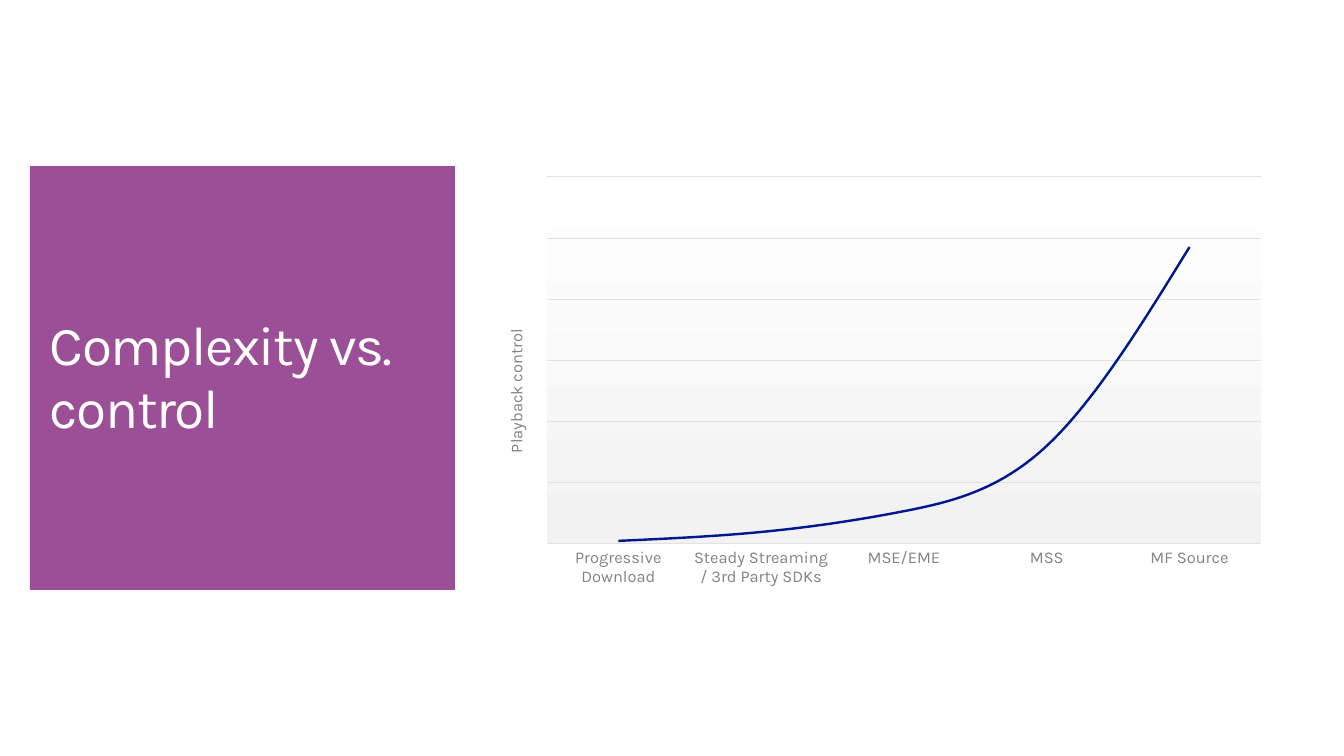
from lxml import etree
from pptx import Presentation
from pptx.chart.data import CategoryChartData
from pptx.dml.color import RGBColor
from pptx.enum.chart import XL_CHART_TYPE, XL_TICK_MARK
from pptx.enum.text import MSO_ANCHOR, MSO_AUTO_SIZE, PP_ALIGN
from pptx.oxml import parse_xml
from pptx.oxml.ns import nsdecls, qn
from pptx.util import Pt

LINE = XL_CHART_TYPE.LINE
NO_TICK = XL_TICK_MARK.NONE
MIDDLE = MSO_ANCHOR.MIDDLE
NO_FIT = MSO_AUTO_SIZE.NONE
LEFT = PP_ALIGN.LEFT

PX = 9255
FACE = "Karla"
COLORS = {"tile": "9B4F96", "white": "FFFFFF", "label": "838383",
          "text": "404040", "grid": "E2E2E2", "curve": "00188F",
          "shade": "F2F2F2"}
TILE = (30, 166, 425, 424)
CHART = (484, 167, 792, 448)
PLOT = (547, 177, 714, 367)
CAPTION = (502, 326)
STEPS = {"Progressive Download": 1, "Steady Streaming / 3rd Party SDKs": 4,
         "MSE/EME": 11, "MSS": 33, "MF Source": 100}
GRID_STEP = 20.6
GRID_ROWS = 6


def color(name):
    return RGBColor.from_string(COLORS[name])


def put(item, values):
    for key, value in values.items():
        setattr(item, key, value)


def style(font, size, name):
    put(font, {"name": FACE, "size": Pt(size), "bold": False})
    font.color.rgb = color(name)


def stroke(line, name, width):
    line.color.rgb = color(name)
    line.width = Pt(width)


def layout(box, inner=False):
    """Return a manual chart layout for a box given in slide px."""
    parts = [("xMode", "edge"), ("yMode", "edge")]
    if inner:
        parts.insert(0, ("layoutTarget", "inner"))
    parts += [("x", (box[0] - CHART[0]) / CHART[2]),
              ("y", (box[1] - CHART[1]) / CHART[3])]
    if inner:
        parts += [("w", box[2] / CHART[2]), ("h", box[3] / CHART[3])]
    root = parse_xml(f"<c:layout {nsdecls('c')}/>")
    manual = etree.SubElement(root, qn("c:manualLayout"))
    for tag, value in parts:
        etree.SubElement(manual, qn("c:" + tag)).set("val", str(value))
    return root


def solid(name):
    return f'<a:solidFill><a:srgbClr val="{COLORS[name]}"/></a:solidFill>'


def fade(*names):
    stops = "".join(f'<a:gs pos="{i * 100000}"><a:srgbClr val="{COLORS[n]}"/></a:gs>'
                    for i, n in enumerate(names))
    return (f'<a:gradFill><a:gsLst>{stops}</a:gsLst>'
            '<a:lin ang="5400000" scaled="0"/></a:gradFill>')


def panel(fill):
    return parse_xml(f"<c:spPr {nsdecls('c', 'a')}>{fill}"
                     "<a:ln><a:noFill/></a:ln></c:spPr>")


def add_title(slide, box):
    title = slide.shapes.title
    put(title, dict(zip(("left", "top", "width", "height"),
                        (v * PX for v in box))))
    title.fill.solid()
    title.fill.fore_color.rgb = color("tile")
    frame = title.text_frame
    frame.text = "Complexity vs. \vcontrol"
    put(frame, {"margin_left": 20 * PX, "margin_right": 20 * PX,
                "margin_top": 16 * PX, "margin_bottom": 16 * PX,
                "vertical_anchor": MIDDLE, "word_wrap": True,
                "auto_size": NO_FIT})
    text = frame.paragraphs[0]
    put(text, {"alignment": LEFT, "line_spacing": 0.95})
    for run in text.runs:
        style(run.font, 40, "white")
        run.font._element.set("spc", "-100")


def add_caption(axis):
    frame = axis.axis_title.text_frame
    frame.text = "Playback control"
    style(frame.paragraphs[0].runs[0].font, 12, "label")
    title = axis.axis_title._element
    body = title.find(".//" + qn("a:bodyPr"))
    body.set("rot", "-5400000")
    body.set("vert", "horz")
    for old in title.findall(qn("c:layout")):
        title.remove(old)
    title.find(qn("c:tx")).addnext(layout(CAPTION))


def add_curve(slide, box):
    data = CategoryChartData()
    data.categories = list(STEPS)
    data.add_series("Series 1", list(STEPS.values()))
    chart = slide.shapes.add_chart(LINE, *(v * PX for v in box), data).chart
    put(chart, {"has_legend": False, "has_title": False})
    style(chart.font, 10, "text")

    plot = chart.plots[0]
    plot.vary_by_categories = False
    curve = plot.series[0]
    curve.smooth = True
    stroke(curve.format.line, "curve", 1.75)

    base = chart.category_axis
    put(base, {"major_tick_mark": NO_TICK, "minor_tick_mark": NO_TICK})
    style(base.tick_labels.font, 12, "label")
    stroke(base.format.line, "grid", 0.75)

    side = chart.value_axis
    put(side, {"minimum_scale": 0, "maximum_scale": GRID_STEP * GRID_ROWS,
               "major_unit": GRID_STEP, "has_major_gridlines": True,
               "visible": False})
    stroke(side.major_gridlines.format.line, "grid", 0.75)
    add_caption(side)

    space = chart._chartSpace
    area = space.find(".//" + qn("c:plotArea"))
    for old in area.findall(qn("c:layout")):
        area.remove(old)
    area.insert(0, layout(PLOT, True))
    area.append(panel(fade("white", "shade")))
    space.find(qn("c:chart")).addnext(panel(solid("white")))


def main():
    deck = Presentation()
    put(deck, {"slide_width": 1344 * PX, "slide_height": 756 * PX})
    slide = deck.slides.add_slide(deck.slide_layouts[5])
    add_title(slide, TILE)
    add_curve(slide, CHART)
    deck.save("out.pptx")


if __name__ == "__main__":
    main()
